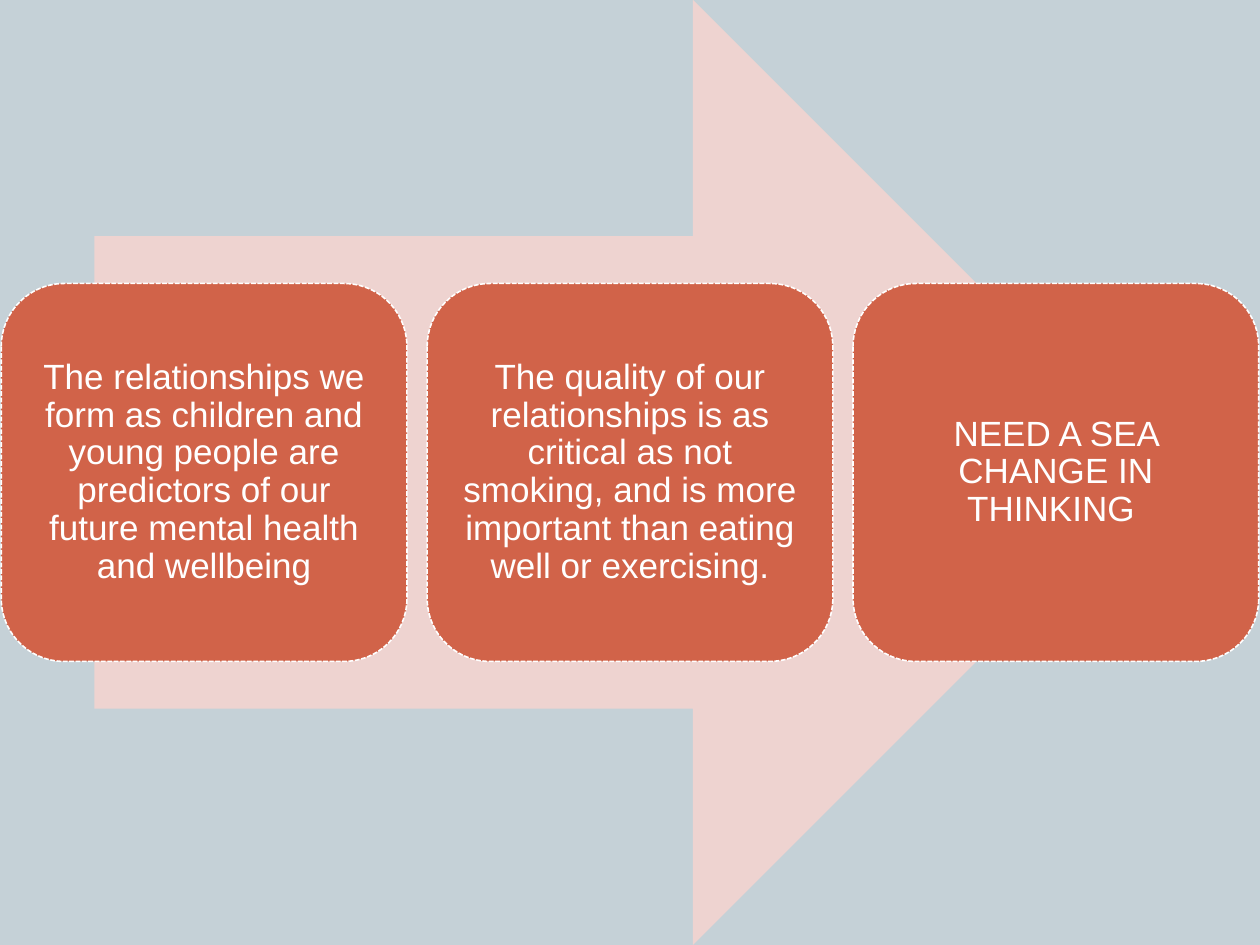
"""Build a slide with three statement cards in front of a broad right arrow."""
from dataclasses import dataclass

from pptx import Presentation
from pptx.dml.color import RGBColor
from pptx.enum.dml import MSO_LINE
from pptx.enum.shapes import MSO_SHAPE
from pptx.enum.text import MSO_ANCHOR, PP_ALIGN
from pptx.util import Inches, Pt

ARROW = MSO_SHAPE.RIGHT_ARROW
CARD = MSO_SHAPE.ROUNDED_RECTANGLE
DASHED = MSO_LINE.SQUARE_DOT
MIDDLE = MSO_ANCHOR.MIDDLE
CENTER = PP_ALIGN.CENTER

SLIDE_WIDTH, SLIDE_HEIGHT = Inches(10), Inches(7.5)
COLORS = {"backdrop": "C5D1D7", "arrow": "EED3D0", "card": "D16349", "white": "FFFFFF"}

CARD_WIDTH, CARD_HEIGHT = 0.322, 0.4
CARD_PITCH = 0.338
STATEMENTS = (
    "The relationships we form as children and young people are predictors "
    "of our future mental health and wellbeing",
    "The quality of our relationships is as critical as not smoking, "
    "and is more important than eating well or exercising.",
    "NEED A SEA CHANGE IN THINKING ",
)


@dataclass(frozen=True)
class Area:
    """Place and size as shares of the slide."""

    left: float
    top: float
    width: float
    height: float


def color(name: str) -> RGBColor:
    """Return the named colour."""
    return RGBColor.from_string(COLORS[name])


def add_block(slide, kind, area: Area, fill: str):
    """Add a flat, borderless preset shape."""
    block = slide.shapes.add_shape(
        kind,
        round(area.left * SLIDE_WIDTH),
        round(area.top * SLIDE_HEIGHT),
        round(area.width * SLIDE_WIDTH),
        round(area.height * SLIDE_HEIGHT),
    )
    block.shadow.inherit = False
    block.fill.solid()
    block.fill.fore_color.rgb = color(fill)
    block.line.fill.background()
    return block


def write(block, text: str, *, size: float = 20, font: str = "Arial",
          ink: str = "white", inset: float = 0.08) -> None:
    """Write centred text into a shape."""
    frame = block.text_frame
    frame.word_wrap = True
    frame.vertical_anchor = MIDDLE
    frame.margin_left = frame.margin_right = Inches(inset)
    frame.margin_top = frame.margin_bottom = Inches(inset)
    paragraph = frame.paragraphs[0]
    paragraph.alignment = CENTER
    paragraph.line_spacing = 0.9
    paragraph.space_after = Pt(0.35 * size)
    run = paragraph.add_run()
    run.text = text
    run.font.size = Pt(size)
    run.font.name = font
    run.font.color.rgb = color(ink)


def add_card(slide, column: int, statement: str) -> None:
    """Add one dashed card in its column, centred on the slide's height."""
    left = 0.5 - CARD_WIDTH / 2 + (column - 1) * CARD_PITCH
    area = Area(left, (1 - CARD_HEIGHT) / 2, CARD_WIDTH, CARD_HEIGHT)
    card = add_block(slide, CARD, area, "card")
    card.line.color.rgb = color("white")
    card.line.width = Pt(0.9)
    card.line.dash_style = DASHED
    write(card, statement)


def main() -> None:
    """Build and save the slide."""
    deck = Presentation()
    deck.slide_width, deck.slide_height = SLIDE_WIDTH, SLIDE_HEIGHT
    slide = deck.slides.add_slide(deck.slide_layouts[6])
    slide.background.fill.solid()
    slide.background.fill.fore_color.rgb = color("backdrop")
    add_block(slide, ARROW, Area(0.075, 0, 0.85, 1), "arrow")
    for column, statement in enumerate(STATEMENTS):
        add_card(slide, column, statement)
    deck.save("out.pptx")


if __name__ == "__main__":
    main()
